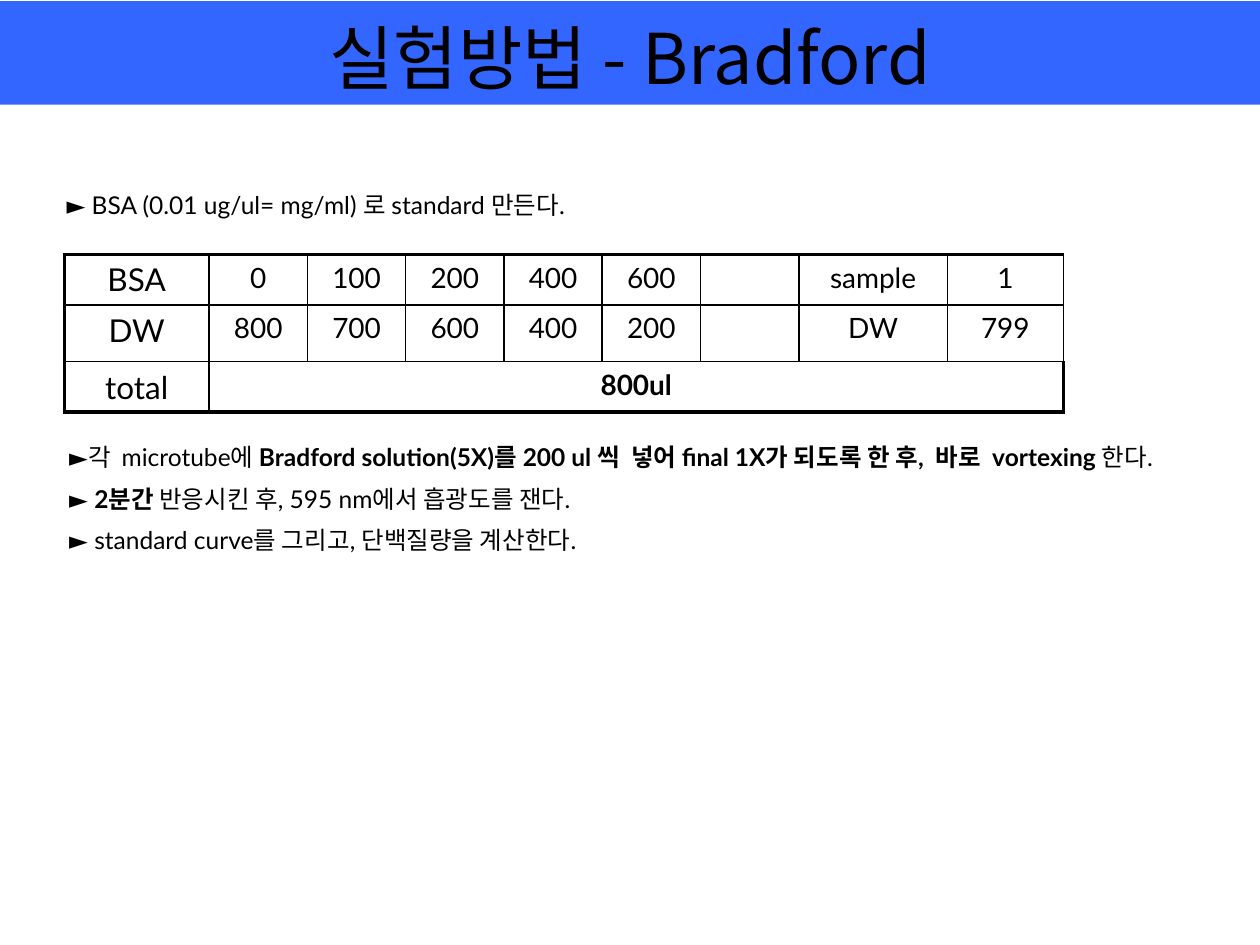
from pptx import Presentation
from pptx.dml.color import RGBColor
from pptx.enum.shapes import MSO_SHAPE as Shape
from pptx.enum.text import MSO_ANCHOR as Anchor, PP_ALIGN as Align
from pptx.oxml.ns import qn
from pptx.util import Inches, Pt
from lxml.etree import SubElement as Sub

BLUE = RGBColor(0x33, 0x66, 0xFF)
BLACK = RGBColor(0, 0, 0)
SANS = "Lato"
KOREAN = "Noto Sans CJK KR"
THIN, THICK = 1, 2.25

COLS = [1.15] + [0.78] * 6 + [1.18, 0.92]
ROWS = [0.4, 0.45, 0.4]
DATA = [
    ["BSA", "0", "100", "200", "400", "600", "", "sample", "1"],
    ["DW", "800", "700", "600", "400", "200", "", "DW", "799"],
    ["total", "800ul"],
]
INTRO = [[("► BSA (0.01 ug/ul= mg/ml) 로 standard 만든다.", False)]]
STEPS = [
    [("►각  microtube에 ", False),
     ("Bradford solution(5X)를 200 ul 씩  넣어 final 1X가 되도록 한 후,  바로  vortexing ", True),
     ("한다.", False)],
    [("► ", False), ("2분간 ", True), ("반응시킨 후, 595 nm에서 흡광도를 잰다.", False)],
    [("► standard curve를 그리고, 단백질량을 계산한다.", False)],
]


def write(para, text, size=14, font=SANS, bold=False, align=None, before=0):
    """Add a formatted run to a paragraph."""
    run = para.add_run()
    run.text = text
    run.font.size, run.font.name, run.font.bold = Pt(size), font, bold
    run.font.color.rgb = BLACK
    if font == KOREAN:
        Sub(run.font._element, qn("a:ea"), typeface=font)
    para.alignment = align
    para.space_before = Pt(before)


def title(slide, text, left, top, width, height):
    """Draw the title band."""
    band = slide.shapes.add_shape(Shape.RECTANGLE, Inches(left), Inches(top),
                                  Inches(width), Inches(height))
    band.shadow.inherit = False
    band.fill.solid()
    band.fill.fore_color.rgb = BLUE
    band.line.fill.background()
    frame = band.text_frame
    frame.word_wrap = True
    frame.vertical_anchor = Anchor.BOTTOM
    write(frame.paragraphs[0], text, size=40, font=KOREAN, align=Align.CENTER)


def notes(slide, paras, left, top, width, height):
    """Draw a text box of paragraphs, each a list of (text, bold) parts."""
    box = slide.shapes.add_textbox(Inches(left), Inches(top), Inches(width), Inches(height))
    frame = box.text_frame
    frame.word_wrap = True
    for i, parts in enumerate(paras):
        para = frame.paragraphs[0] if i == 0 else frame.add_paragraph()
        for text, bold in parts:
            write(para, text, bold=bold, before=7 if i else 0)


def edge(cell, **widths):
    """Set the four borders of a cell, widths in points."""
    props = cell._tc.get_or_add_tcPr()
    for side in "LRTB":
        line = Sub(props, qn(f"a:ln{side}"), w=str(Pt(widths[side])))
        Sub(Sub(line, qn("a:solidFill")), qn("a:srgbClr"), val=str(BLACK))


def dilution(slide, left, top):
    """Draw the dilution table."""
    frame = slide.shapes.add_table(len(ROWS), len(COLS), Inches(left), Inches(top),
                                   Inches(sum(COLS)), Inches(sum(ROWS)))
    table = frame.table
    table.first_row = table.horz_banding = False
    for col, width in zip(table.columns, COLS):
        col.width = Inches(width)
    for row, height in zip(table.rows, ROWS):
        row.height = Inches(height)
    last, end = len(ROWS) - 1, len(COLS) - 1
    table.cell(last, 1).merge(table.cell(last, end))
    for r in range(len(ROWS)):
        for c in range(len(COLS)):
            cell = table.cell(r, c)
            total = r == last and c > 0
            edge(cell, L=THIN if c else THICK, R=THICK if total else THIN,
                 T=THIN if r else THICK, B=THICK if r == last else THIN)
            cell.fill.background()
            if c < len(DATA[r]) and DATA[r][c]:
                write(cell.text_frame.paragraphs[0], DATA[r][c], size=16 if c else 18,
                      bold=total, align=Align.CENTER)


deck = Presentation()
deck.slide_width, deck.slide_height = Inches(10), Inches(7.5)
slide = deck.slides.add_slide(deck.slide_layouts[6])
title(slide, "실험방법 - Bradford", 0, 0.01, 10, 0.82)
notes(slide, INTRO, 0.43, 1.46, 9.57, 0.35)
dilution(slide, 0.51, 2.02)
notes(slide, STEPS, 0.45, 3.46, 9.29, 1.3)
deck.save("out.pptx")
